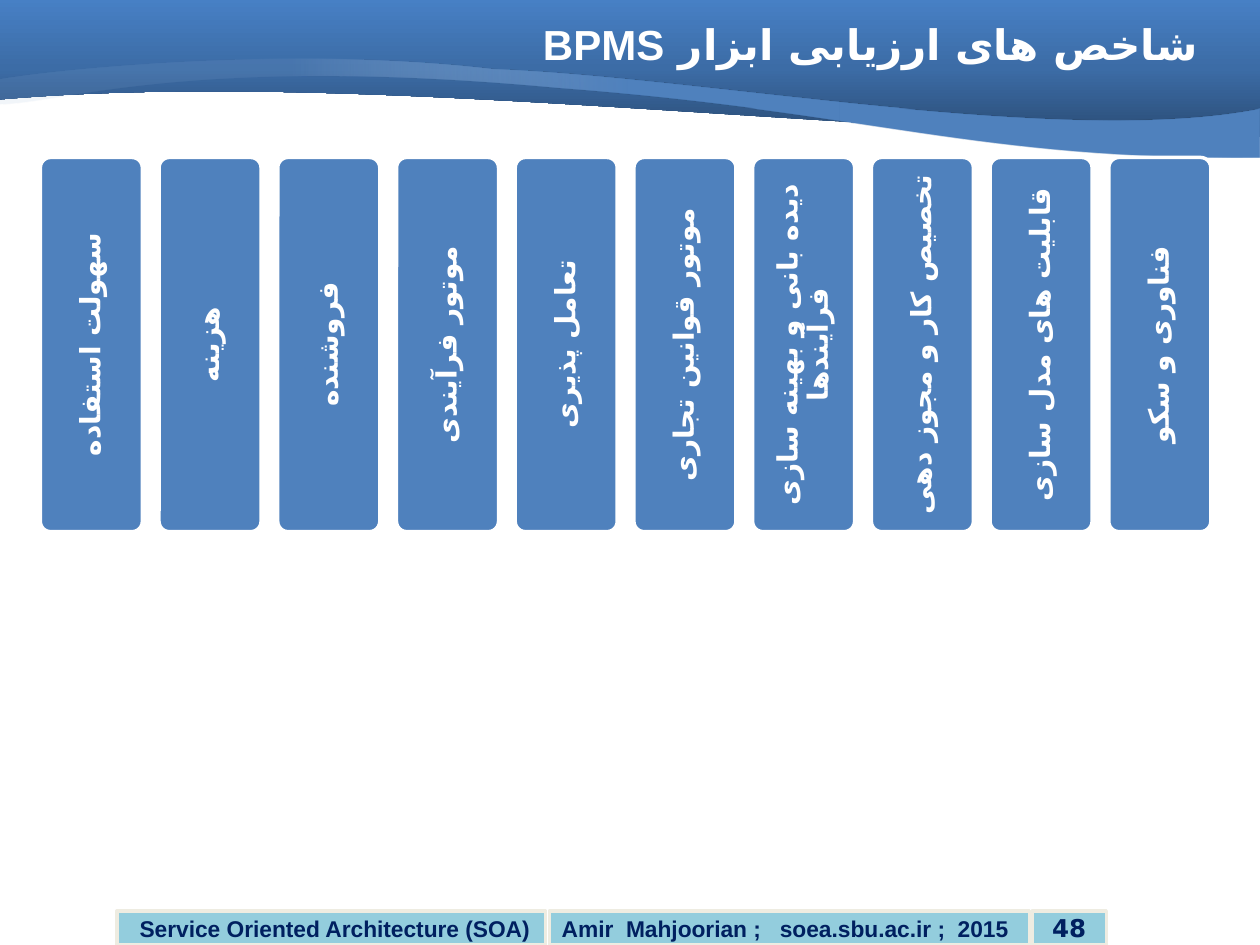
from lxml import etree
from pptx import Presentation
from pptx.dml.color import RGBColor
from pptx.enum.shapes import MSO_SHAPE
from pptx.enum.text import MSO_ANCHOR, PP_ALIGN
from pptx.oxml.ns import qn
from pptx.util import Inches, Pt

LEFT, CENTER, RIGHT = PP_ALIGN.LEFT, PP_ALIGN.CENTER, PP_ALIGN.RIGHT
RECT, ROUNDED = MSO_SHAPE.RECTANGLE, MSO_SHAPE.ROUNDED_RECTANGLE
BLUE, PALE, WHITE, NAVY = "4F81BD", "95B3D7", "FFFFFF", "002060"
PERSIAN_FONT = "DejaVu Sans"

TITLE = "شاخص های ارزیابی ابزار BPMS"
CRITERIA = [  # left to right
    "سهولت استفاده",
    "هزینه",
    "فروشنده",
    "موتور فرآیندی",
    "تعامل پذیری",
    "موتور قوانین تجاری",
    "دیده بانی و بهینه سازی فرآیندها",
    "تخصیص کار و مجوز دهی",
    "قابلیت های مدل سازی",
    "فناوری و سکو",
]
FOOTER = [  # text, left, width, alignment, font, size
    ("48", 8.19, 0.59, CENTER, "DejaVu Sans", 14),
    (" Service Oriented Architecture (SOA)", 0.93, 3.4, CENTER, "Arial", 13),
    ("Amir  Mahjoorian ;   soea.sbu.ac.ir ;  2015", 4.36, 3.81, LEFT, "Arial", 13),
]
# Outlines: one point is a line end, three points are a Bezier segment.
BANNER = [[(-0.01, -0.01)], [(10, -0.01)], [(10, 1.09)],
          [(6.66, 1.09), (2.88, 0.54), (-0.01, 0.79)]]
SWOOSH = [[(10, 0.86)], [(10, 1.25)],
          [(7.74, 1.27), (6.93, 0.89), (4.42, 0.7)],
          [(1.51, 0.43), (0.47, 0.83), (0, 0.83)],
          [(0, 0.81), (-0.01, 0.76), (0, 0.63)],
          [(0.46, 0.55), (2.31, 0.36), (3.92, 0.55)],
          [(5.58, 0.61), (8.44, 1.17), (10, 0.86)]]
# Gradient stops: position %, colour, opacity %
BANNER_STOPS = [(0, "2A4C75", 100), (50, "3C6CA6", 100), (100, "4780C5", 100)]
SWOOSH_STOPS = [(0, PALE, 12), (23, PALE, 12), (50, BLUE, 100), (100, BLUE, 100)]

BAR_LEFT, BAR_TOP, BAR_WIDTH, BAR_HEIGHT = 0.32, 1.25, 0.81, 2.97
LAST_BAR_LEFT = 8.8
BAR_PITCH = (LAST_BAR_LEFT - BAR_LEFT) / (len(CRITERIA) - 1)
FOOTER_TOP, FOOTER_HEIGHT = 7.23, 0.27


def color(hex_code):
    return RGBColor.from_string(hex_code)


def write(shape, text, font, size, fill, align=CENTER, rtl=False, wrap=True,
          spacing=None, inset=None, vertical=None):
    frame = shape.text_frame
    frame.word_wrap = wrap
    frame.vertical_anchor = MSO_ANCHOR.MIDDLE
    if inset is not None:
        frame.margin_left = frame.margin_right = Inches(inset)
        frame.margin_top = frame.margin_bottom = Inches(inset)
    if vertical:
        frame._txBody.bodyPr.set("vert", vertical)
    paragraph = frame.paragraphs[0]
    paragraph.alignment = align
    if spacing:
        paragraph.line_spacing = spacing
    run = paragraph.add_run()
    run.text = text
    run.font.name, run.font.size, run.font.bold = font, Pt(size), True
    run.font.color.rgb = color(fill)
    if rtl:
        paragraph._p.get_or_add_pPr().set("rtl", "1")
        etree.SubElement(run._r.get_or_add_rPr(), qn("a:cs"), typeface=PERSIAN_FONT)


def add_panel(slide, kind, left, top, width, height, fill, line):
    panel = slide.shapes.add_shape(
        kind, Inches(left), Inches(top), Inches(width), Inches(height))
    panel.shadow.inherit = False
    panel.fill.solid()
    panel.fill.fore_color.rgb = color(fill)
    panel.line.color.rgb = color(line)
    panel.line.width = Pt(2)
    return panel


def bend(wave, segments):
    """Turn the straight sides that have control points into Bezier curves."""
    sides = list(wave._element.iter(qn("a:lnTo")))
    for side, segment in zip(sides, segments):
        if len(segment) == 1:
            continue
        curve = etree.Element(qn("a:cubicBezTo"))
        for x, y in segment:
            etree.SubElement(curve, qn("a:pt"), x=str(Inches(x) - wave.left),
                             y=str(Inches(y) - wave.top))
        side.getparent().replace(side, curve)


def add_wave(slide, outline, stops, angle):
    """Add a borderless curved outline; the gradient angle runs clockwise."""
    ends = [(Inches(x), Inches(y)) for x, y in (segment[-1] for segment in outline)]
    builder = slide.shapes.build_freeform(*ends[0])
    builder.add_line_segments(ends[1:], close=True)
    wave = builder.convert_to_shape()
    bend(wave, outline[1:])
    wave.shadow.inherit = False
    wave.line.fill.background()
    wave.fill.gradient()
    gradient = wave._element.spPr.find(qn("a:gradFill"))
    stop_list = gradient.find(qn("a:gsLst"))
    for old_stop in list(stop_list):
        stop_list.remove(old_stop)
    for position, hex_code, opacity in stops:
        stop = etree.SubElement(stop_list, qn("a:gs"), pos=str(position * 1000))
        tint = etree.SubElement(stop, qn("a:srgbClr"), val=hex_code)
        if opacity < 100:
            etree.SubElement(tint, qn("a:alpha"), val=str(opacity * 1000))
    gradient.find(qn("a:lin")).set("ang", str(angle * 60000))


def main():
    deck = Presentation()
    deck.slide_width, deck.slide_height = Inches(10), Inches(7.5)
    slide = deck.slides.add_slide(deck.slide_layouts[5])

    add_wave(slide, BANNER, BANNER_STOPS, 270)
    add_wave(slide, SWOOSH, SWOOSH_STOPS, 0)

    for text, left, width, align, font, size in FOOTER:
        cell = add_panel(slide, RECT, left, FOOTER_TOP, width, FOOTER_HEIGHT,
                         "93CDDD", "EEECE1")
        write(cell, text, font, size, NAVY, align=align, wrap=False)

    title = slide.shapes.title
    title.left, title.top = Inches(0.47), Inches(0)
    title.width, title.height = Inches(9.14), Inches(0.7)
    write(title, TITLE, "Arial", 24, WHITE, align=RIGHT, rtl=True)
    slide.shapes._spTree.append(title._element)  # in front of the banner

    for index, criterion in enumerate(CRITERIA):
        bar = add_panel(slide, ROUNDED, BAR_LEFT + index * BAR_PITCH, BAR_TOP,
                        BAR_WIDTH, BAR_HEIGHT, BLUE, WHITE)
        bar.adjustments[0] = 0.1
        write(bar, criterion, "Calibri", 16, WHITE, rtl=True, spacing=0.9,
              inset=0.07, vertical="vert270")

    deck.save("out.pptx")


if __name__ == "__main__":
    main()
